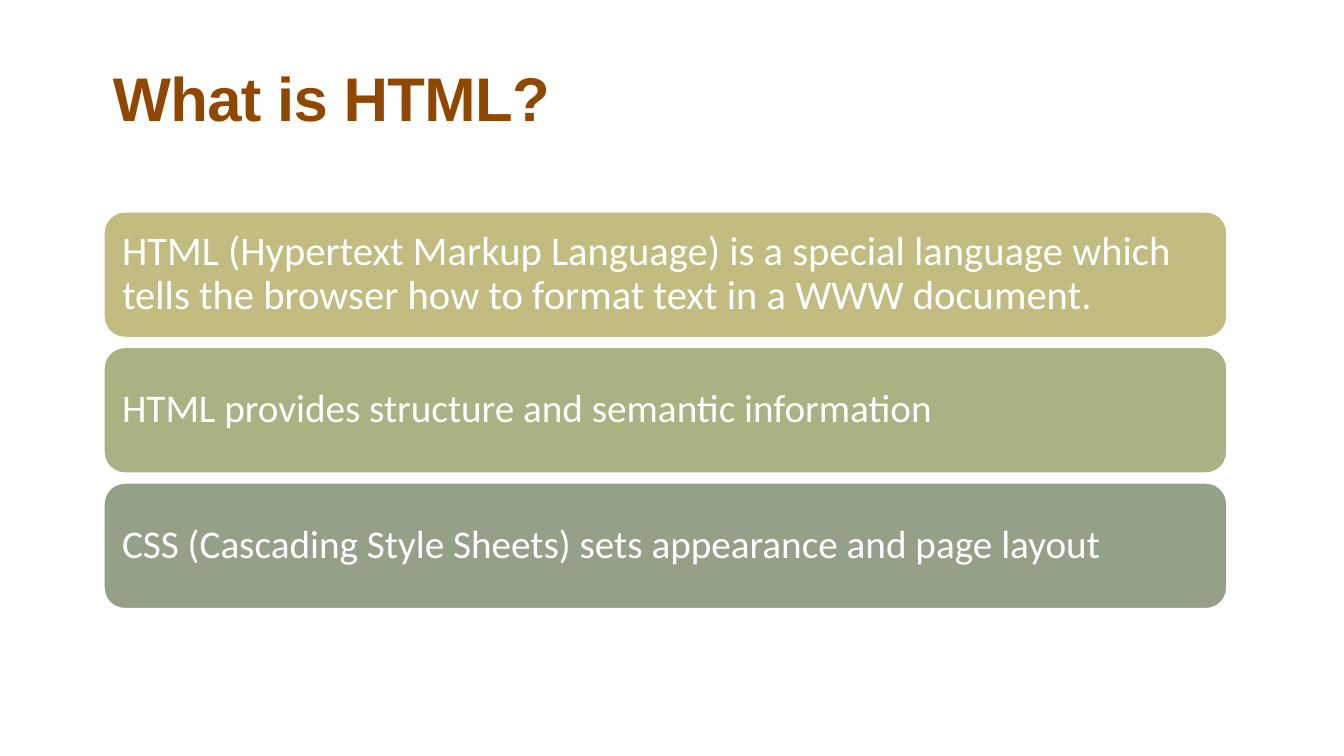
from dataclasses import dataclass

from pptx import Presentation
from pptx.dml.color import RGBColor
from pptx.enum.shapes import MSO_SHAPE
from pptx.enum.text import MSO_ANCHOR, MSO_AUTO_SIZE, PP_ALIGN
from pptx.util import Inches, Pt


@dataclass(frozen=True)
class Theme:
    title_color: str = "904800"
    light: str = "FFFFFF"
    title_font: str = "Arial"
    body_font: str = "Calibri"
    title_size: float = 44
    lead_size: float = 29
    body_size: float = 28
    outline_width: float = 1.25


THEME = Theme()
TITLE_ONLY = 5
BAR_LEFT, BAR_TOP = 1.03, 2.1
BAR_WIDTH, BAR_HEIGHT = 11.14, 1.25
BAR_PITCH = 1.345
BAR_INSET = 0.12

BARS = [
    ("HTML (Hypertext Markup Language) is a special language which tells the "
     "browser how to format text in a WWW document.", "C2BC80", THEME.lead_size),
    ("HTML provides structure and semantic information", "A8B283", THEME.body_size),
    ("CSS (Cascading Style Sheets) sets appearance and page layout", "94A088",
     THEME.body_size),
]


def apply_format(target, values):
    for name, value in values.items():
        setattr(target, name, value)


def write_text(shape, text, line_spacing, color, font_values):
    frame = shape.text_frame
    apply_format(frame, {
        "word_wrap": True,
        "auto_size": MSO_AUTO_SIZE.NONE,
        "vertical_anchor": MSO_ANCHOR.MIDDLE,
    })
    paragraph = frame.paragraphs[0]
    apply_format(paragraph, {"alignment": PP_ALIGN.LEFT, "line_spacing": line_spacing})
    run = paragraph.add_run()
    run.text = text
    apply_format(run.font, font_values)
    run.font.color.rgb = RGBColor.from_string(color)
    return run


def add_title(slide, text):
    title = slide.shapes.title
    apply_format(title, {
        "left": Inches(1.02),
        "top": Inches(0.42),
        "width": Inches(11),
        "height": Inches(1.19),
    })
    run = write_text(title, text, 0.85, THEME.title_color, {
        "name": THEME.title_font,
        "size": Pt(THEME.title_size),
        "bold": True,
    })
    run.font._element.set("spc", "-50")


def add_bar(slide, index, text, fill_color, size):
    bar = slide.shapes.add_shape(
        MSO_SHAPE.ROUNDED_RECTANGLE,
        Inches(BAR_LEFT), Inches(BAR_TOP + index * BAR_PITCH),
        Inches(BAR_WIDTH), Inches(BAR_HEIGHT),
    )
    bar.shadow.inherit = False
    bar.fill.solid()
    bar.fill.fore_color.rgb = RGBColor.from_string(fill_color)
    bar.line.color.rgb = RGBColor.from_string(THEME.light)
    bar.line.width = Pt(THEME.outline_width)
    sides = ("left", "top", "right", "bottom")
    apply_format(bar.text_frame, {f"margin_{side}": Inches(BAR_INSET) for side in sides})
    write_text(bar, text, 0.9, THEME.light, {
        "name": THEME.body_font,
        "size": Pt(size),
    })


def main():
    presentation = Presentation()
    apply_format(presentation, {
        "slide_width": Inches(13.33),
        "slide_height": Inches(7.5),
    })
    slide = presentation.slides.add_slide(presentation.slide_layouts[TITLE_ONLY])
    add_title(slide, "What is HTML?")
    for index, (text, fill_color, size) in enumerate(BARS):
        add_bar(slide, index, text, fill_color, size)
    presentation.save("out.pptx")


if __name__ == "__main__":
    main()
